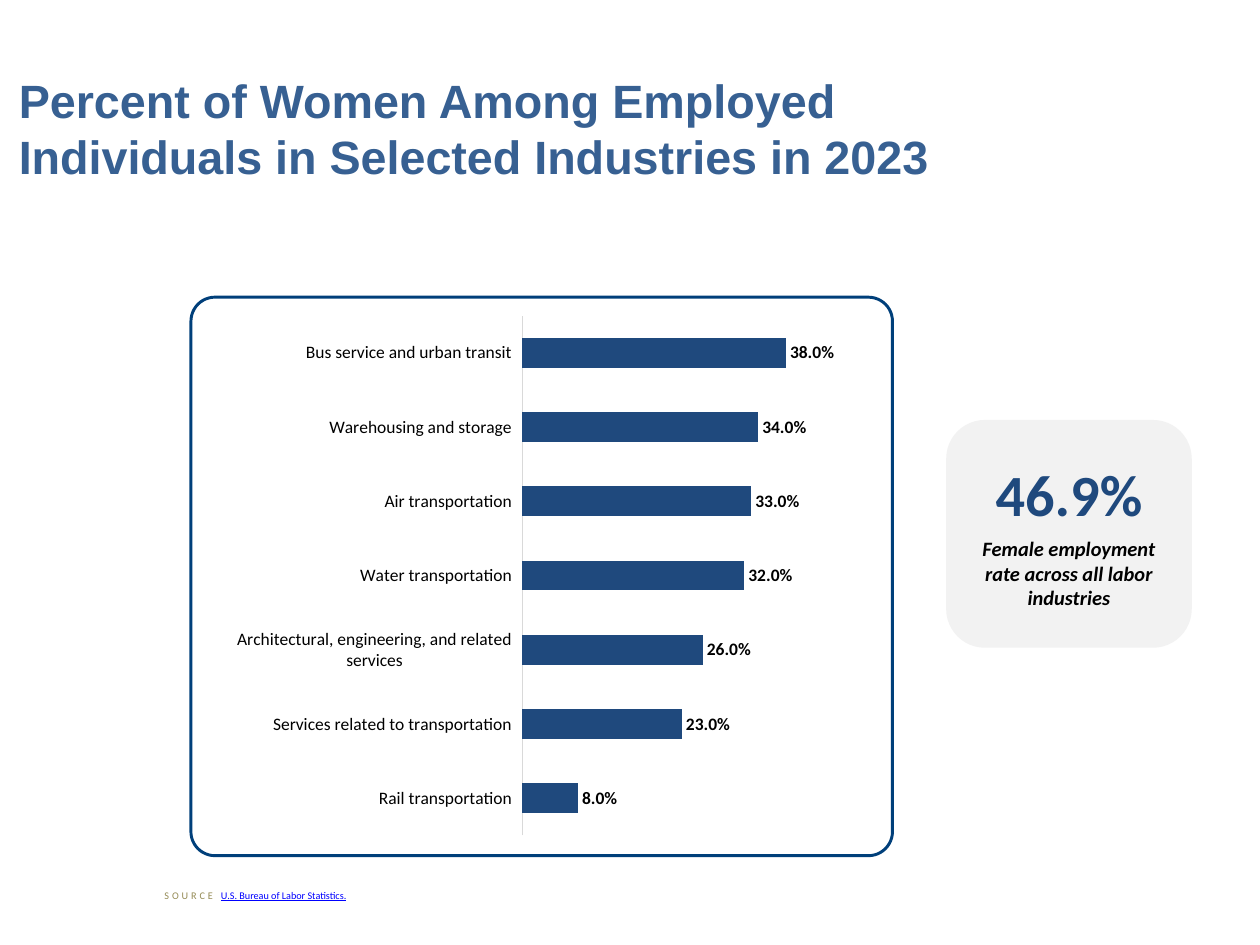
from lxml.etree import SubElement
from pptx import Presentation
from pptx.chart.data import CategoryChartData
from pptx.dml.color import RGBColor
from pptx.enum.chart import XL_CHART_TYPE, XL_LABEL_POSITION, XL_TICK_LABEL_POSITION, XL_TICK_MARK
from pptx.enum.shapes import MSO_SHAPE
from pptx.enum.text import MSO_ANCHOR, MSO_AUTO_SIZE, PP_ALIGN
from pptx.oxml.ns import qn
from pptx.util import Cm, Pt

COLORS = {
    "title": "376092",
    "bar": "1F497D",
    "frame": "003F7A",
    "callout": "F2F2F2",
    "axis": "D9D9D9",
    "text": "000000",
    "source": "948A54",
    "link": "0000FF",
}

WOMEN_SHARE = {
    "Bus service and urban transit": 0.38,
    "Warehousing and storage": 0.34,
    "Air transportation": 0.33,
    "Water transportation": 0.32,
    "Architectural, engineering, and related services": 0.26,
    "Services related to transportation": 0.23,
    "Rail transportation": 0.08,
}


class SlideBuilder:
    """Holds the text style and the slide that the elements go on."""

    heading_font = "Arial"
    body_font = "Calibri"

    def __init__(self, presentation):
        self.slide = presentation.slides.add_slide(presentation.slide_layouts[5])

    def color(self, name):
        return RGBColor.from_string(COLORS[name])

    def style(self, font, size, color, bold=False, name=None):
        font.name = name or self.body_font
        font.size = Pt(size)
        font.bold = bold
        font.color.rgb = self.color(color)

    def run(self, paragraph, text, size, color, bold=False, name=None):
        run = paragraph.add_run()
        run.text = text
        self.style(run.font, size, color, bold, name)
        return run

    def title(self, box, text):
        title = self.slide.shapes.title
        title.left, title.top, title.width, title.height = map(Cm, box)
        frame = title.text_frame
        frame.auto_size = MSO_AUTO_SIZE.NONE
        frame.vertical_anchor = MSO_ANCHOR.MIDDLE
        paragraph = frame.paragraphs[0]
        paragraph.alignment = PP_ALIGN.LEFT
        self.run(paragraph, text, 32, "title", True, self.heading_font)

    def bar_chart(self, box, values, plot_area):
        data = CategoryChartData(number_format="0.0%")
        data.categories = list(values)
        data.add_series("Series 1", list(values.values()))
        chart = self.slide.shapes.add_chart(
            XL_CHART_TYPE.BAR_CLUSTERED, *map(Cm, box), data).chart
        chart.has_legend = False
        chart.has_title = False
        self.style(chart.font, 10, "text")

        categories = chart.category_axis
        categories.reverse_order = True
        categories.major_tick_mark = XL_TICK_MARK.NONE
        categories.tick_label_position = XL_TICK_LABEL_POSITION.LOW
        categories.format.line.color.rgb = self.color("axis")
        categories.format.line.width = Pt(0.75)
        self.style(categories.tick_labels.font, 12, "text")

        scale = chart.value_axis
        scale.minimum_scale, scale.maximum_scale = 0, 0.4
        scale.has_major_gridlines = False
        scale.visible = False

        plot = chart.plots[0]
        plot.gap_width = 150
        plot.vary_by_categories = False
        bars = plot.series[0]
        bars.format.fill.solid()
        bars.format.fill.fore_color.rgb = self.color("bar")
        labels = bars.data_labels
        labels.show_value = True
        labels.number_format = "0.0%"
        labels.number_format_is_linked = False
        labels.position = XL_LABEL_POSITION.OUTSIDE_END
        self.style(labels.font, 12, "text", True)
        self.place_plot(chart, plot_area)

    def place_plot(self, chart, plot_area):
        """Fix the inner plot area as fractions of the chart (x, y, w, h)."""
        area = chart.plots[0]._element.getparent()
        for layout in area.findall(qn("c:layout")):
            area.remove(layout)
        layout = SubElement(area, qn("c:layout"))
        area.insert(0, layout)
        manual = SubElement(layout, qn("c:manualLayout"))
        settings = [("layoutTarget", "inner"), ("xMode", "edge"), ("yMode", "edge")]
        settings += zip("xywh", map(str, plot_area))
        for tag, value in settings:
            SubElement(manual, qn(f"c:{tag}")).set("val", value)

    def rounded_box(self, box, radius, fill=None, line=None):
        shape = self.slide.shapes.add_shape(MSO_SHAPE.ROUNDED_RECTANGLE, *map(Cm, box))
        shape.shadow.inherit = False
        shape.adjustments[0] = radius
        if fill:
            shape.fill.solid()
            shape.fill.fore_color.rgb = self.color(fill)
        else:
            shape.fill.background()
        if line:
            shape.line.color.rgb = self.color(line)
            shape.line.width = Pt(2)
        else:
            shape.line.fill.background()
        return shape

    def callout(self, box, figure, caption):
        frame = self.rounded_box(box, 0.17, fill="callout").text_frame
        frame.word_wrap = True
        frame.vertical_anchor = MSO_ANCHOR.MIDDLE
        paragraph = frame.paragraphs[0]
        paragraph.alignment = PP_ALIGN.CENTER
        paragraph.space_after = Pt(6)
        self.run(paragraph, figure, 40, "bar", True)
        paragraph = frame.add_paragraph()
        paragraph.alignment = PP_ALIGN.CENTER
        self.run(paragraph, caption, 14, "text", True).font.italic = True

    def source(self, box, label, name):
        frame = self.slide.shapes.add_textbox(*map(Cm, box)).text_frame
        frame.word_wrap = True
        frame.auto_size = MSO_AUTO_SIZE.SHAPE_TO_FIT_TEXT
        paragraph = frame.paragraphs[0]
        label_run = self.run(paragraph, label, 7, "source")
        label_run.font._element.set("spc", "200")
        self.run(paragraph, name, 7, "link").font.underline = True


def main():
    presentation = Presentation()
    presentation.slide_width = Cm(30.48)
    presentation.slide_height = Cm(22.86)
    builder = SlideBuilder(presentation)
    builder.title((0.2, 0.81, 22.86, 4.57),
                  "Percent of Women Among Employed Individuals in Selected Industries in 2023")
    builder.bar_chart((4.62, 6.76, 20.4, 13.94), WOMEN_SHARE, (0.393, 0.063, 0.329, 0.902))
    builder.rounded_box((4.62, 7.19, 16.97, 13.51), 0.043, line="frame")
    builder.source((3.73, 21.39, 21.31, 0.56), "SOURCE ", "U.S. Bureau of Labor Statistics.")
    builder.callout((22.89, 10.16, 5.94, 5.51), "46.9%",
                    "Female employment rate across all labor industries")
    presentation.save("out.pptx")


if __name__ == "__main__":
    main()
